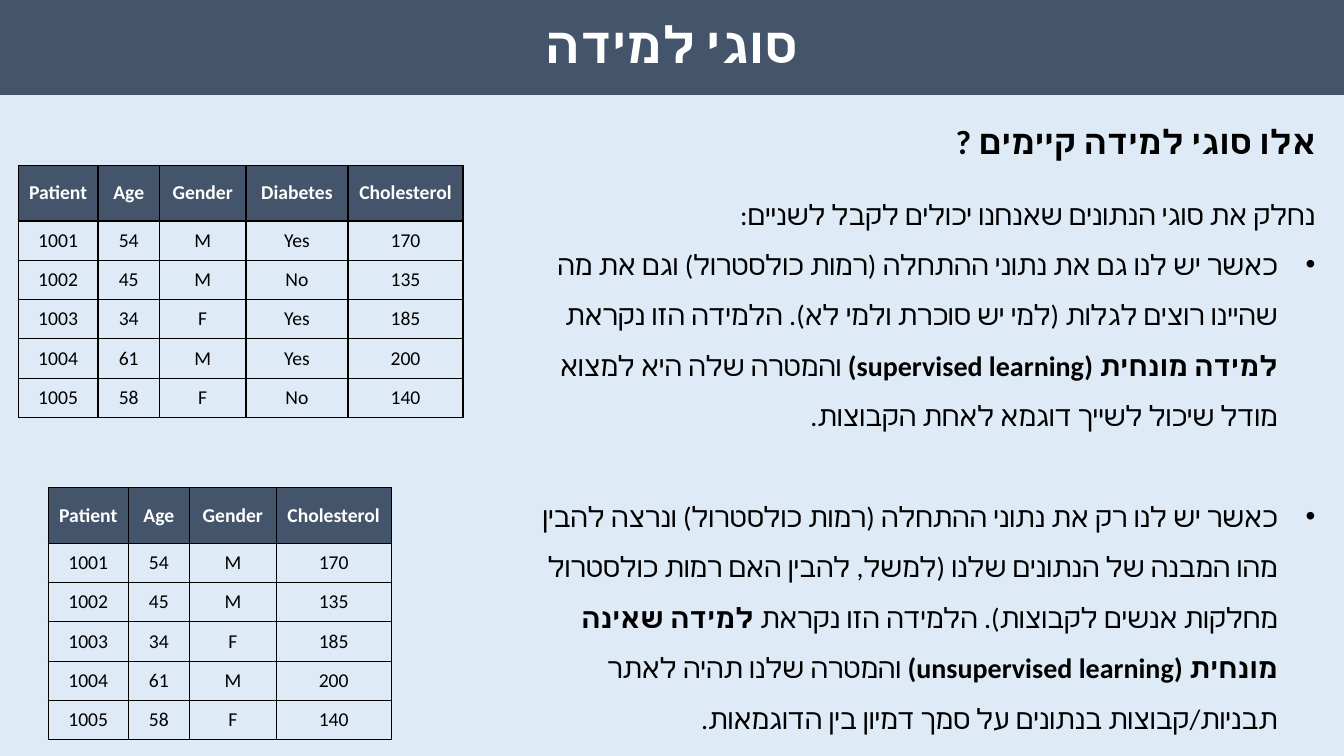
from dataclasses import dataclass

from lxml import etree
from pptx import Presentation
from pptx.dml.color import RGBColor
from pptx.enum.shapes import MSO_SHAPE
from pptx.enum.text import MSO_ANCHOR, PP_ALIGN
from pptx.oxml.ns import qn
from pptx.util import Cm, Pt

RECT = MSO_SHAPE.RECTANGLE
MIDDLE = MSO_ANCHOR.MIDDLE
CENTER, RIGHT = PP_ALIGN.CENTER, PP_ALIGN.RIGHT


@dataclass(frozen=True)
class Theme:
    font: str = "Calibri"
    back: RGBColor = RGBColor(0xDE, 0xEB, 0xF7)
    navy: RGBColor = RGBColor(0x44, 0x54, 0x6A)
    white: RGBColor = RGBColor(0xFF, 0xFF, 0xFF)
    black: RGBColor = RGBColor(0, 0, 0)
    title: int = 36
    heading: int = 24
    body: int = 20
    cell: int = 14


@dataclass(frozen=True)
class Column:
    name: str
    width: float
    values: tuple[str, ...]


@dataclass(frozen=True)
class PatientTable:
    left: float
    top: float
    columns: list[Column]


@dataclass(frozen=True)
class Phrase:
    text: str
    bold: bool = False


@dataclass(frozen=True)
class Para:
    phrases: tuple[Phrase, ...]
    bullet: bool = False
    after: int = 0


THEME = Theme()
HEADER_HEIGHT, ROW_HEIGHT = 1.4, 0.99

COLUMNS = [
    Column("Patient", 2.01, ("1001", "1002", "1003", "1004", "1005")),
    Column("Age", 1.55, ("54", "45", "34", "61", "58")),
    Column("Gender", 2.18, ("M", "M", "F", "M", "F")),
    Column("Diabetes", 2.57, ("Yes", "No", "Yes", "Yes", "No")),
    Column("Cholesterol", 2.9, ("170", "135", "185", "200", "140")),
]
TABLES = [
    PatientTable(0.46, 4.17, COLUMNS),
    PatientTable(1.22, 12.29, [c for c in COLUMNS if c.name != "Diabetes"]),
]

HEADING = [Para((Phrase("אלו סוגי למידה קיימים ?", True),))]
BODY = [
    Para((Phrase("נחלק את סוגי הנתונים שאנחנו יכולים לקבל לשניים:"),)),
    Para((
        Phrase("כאשר יש לנו גם את נתוני ההתחלה (רמות כולסטרול) וגם את מה שהיינו רוצים "
               "לגלות (למי יש סוכרת ולמי לא). הלמידה הזו נקראת "),
        Phrase("למידה מונחית (supervised learning) ", True),
        Phrase("והמטרה שלה היא למצוא מודל שיכול לשייך דוגמא לאחת הקבוצות."),
    ), bullet=True, after=36),
    Para((
        Phrase("כאשר יש לנו רק את נתוני ההתחלה (רמות כולסטרול) ונרצה להבין מהו המבנה של "
               "הנתונים שלנו (למשל, להבין האם רמות כולסטרול מחלקות אנשים לקבוצות). "
               "הלמידה הזו נקראת "),
        Phrase("למידה שאינה מונחית (unsupervised learning) ", True),
        Phrase("והמטרה שלנו תהיה לאתר תבניות/קבוצות בנתונים על סמך דמיון בין הדוגמאות."),
    ), bullet=True),
]


def style_run(r, size: int, color: RGBColor, bold: bool) -> None:
    r.font.size = Pt(size)
    r.font.bold = bold
    r.font.color.rgb = color
    r.font.name = THEME.font
    etree.SubElement(r._r.get_or_add_rPr(), qn("a:cs"), typeface=THEME.font)


def add_title(s, text: str) -> None:
    sp = s.shapes.add_shape(RECT, 0, 0, Cm(33.87), Cm(2.39))
    sp.shadow.inherit = False
    sp.fill.solid()
    sp.fill.fore_color.rgb = THEME.navy
    sp.line.fill.background()
    tf = sp.text_frame
    tf.text = text
    tf.vertical_anchor = MIDDLE
    p = tf.paragraphs[0]
    p.alignment = CENTER
    p.line_spacing = 0.9
    style_run(p.runs[0], THEME.title, THEME.white, True)


def add_rtl_text(s, left: float, top: float, width: float, height: float,
                 paras: list[Para], size: int, spacing: float) -> None:
    tf = s.shapes.add_textbox(Cm(left), Cm(top), Cm(width), Cm(height)).text_frame
    tf.word_wrap = True
    for i, para in enumerate(paras):
        p = tf.add_paragraph() if i else tf.paragraphs[0]
        p.alignment = RIGHT
        p.line_spacing = spacing
        p.space_after = Pt(para.after)
        ppr = p._p.get_or_add_pPr()
        ppr.set("rtl", "1")
        if para.bullet:
            ppr.set("marL", str(Cm(0.95)))
            ppr.set("indent", str(-Cm(0.95)))
            etree.SubElement(ppr, qn("a:buFont"), typeface="Arial")
            etree.SubElement(ppr, qn("a:buChar"), char="•")
        for phrase in para.phrases:
            r = p.add_run()
            r.text = phrase.text
            style_run(r, size, THEME.black, phrase.bold)


def add_borders(cell) -> None:
    tcpr = cell._tc.get_or_add_tcPr()
    for i, side in enumerate(("lnL", "lnR", "lnT", "lnB")):
        ln = etree.Element(qn(f"a:{side}"), w=str(Pt(1)))
        fill = etree.SubElement(ln, qn("a:solidFill"))
        etree.SubElement(fill, qn("a:srgbClr"), val=str(THEME.black))
        tcpr.insert(i, ln)


def fill_cell(cell, text: str, header: bool) -> None:
    cell.text = text
    cell.vertical_anchor = MIDDLE
    cell.margin_left = cell.margin_right = Cm(0.15)
    p = cell.text_frame.paragraphs[0]
    p.alignment = CENTER
    style_run(p.runs[0], THEME.cell, THEME.white if header else THEME.black, header)
    if header:
        cell.fill.solid()
        cell.fill.fore_color.rgb = THEME.navy
    else:
        cell.fill.background()
    add_borders(cell)


def add_patient_table(s, patients: PatientTable) -> None:
    columns = patients.columns
    count = len(columns[0].values)
    width = sum(c.width for c in columns)
    height = HEADER_HEIGHT + count * ROW_HEIGHT
    table = s.shapes.add_table(count + 1, len(columns), Cm(patients.left),
                               Cm(patients.top), Cm(width), Cm(height)).table
    table.horz_banding = False
    for i, row in enumerate(table.rows):
        row.height = Cm(ROW_HEIGHT if i else HEADER_HEIGHT)
    for j, column in enumerate(columns):
        table.columns[j].width = Cm(column.width)
        for i, text in enumerate((column.name, *column.values)):
            fill_cell(table.cell(i, j), text, header=i == 0)


def main() -> None:
    prs = Presentation()
    prs.slide_width, prs.slide_height = Cm(33.87), Cm(19.05)
    s = prs.slides.add_slide(prs.slide_layouts[6])
    s.background.fill.solid()
    s.background.fill.fore_color.rgb = THEME.back

    # Title band
    add_title(s, "סוגי למידה")

    # Labelled and unlabelled data
    for patients in TABLES:
        add_patient_table(s, patients)

    # Question and explanation
    add_rtl_text(s, 15.11, 2.92, 18.31, 1.27, HEADING, THEME.heading, 1.0)
    add_rtl_text(s, 12.62, 4.42, 20.78, 14.2, BODY, THEME.body, 1.5)

    prs.save("out.pptx")


if __name__ == "__main__":
    main()
